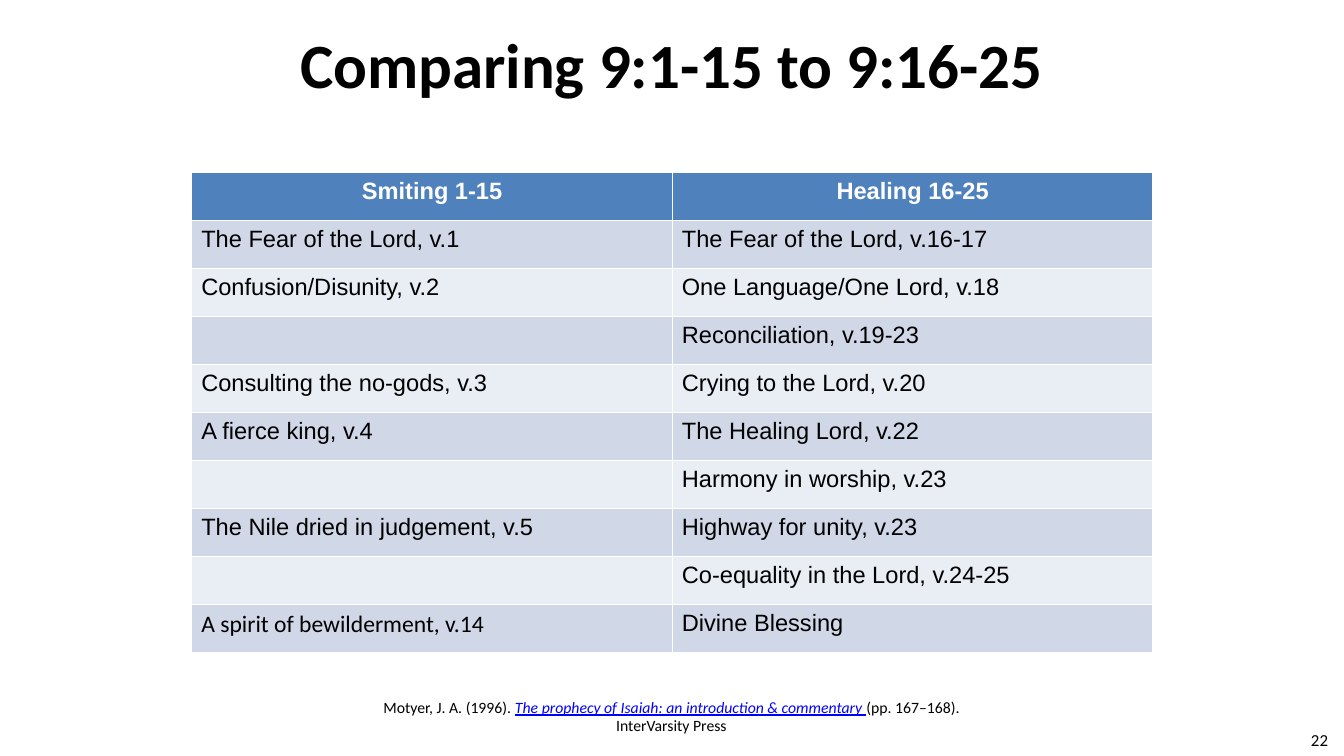
from dataclasses import dataclass

from pptx import Presentation
from pptx.dml.color import RGBColor
from pptx.enum import text
from pptx.util import Inches, Pt


@dataclass(frozen=True)
class Theme:
    black: str = "000000"
    white: str = "FFFFFF"
    link: str = "0000FF"
    header: str = "4F81BD"
    bands: tuple = ("D0D8E8", "E9EDF4")
    heading_font: str = "Calibri"
    table_font: str = "Arial"
    title_size: float = 48
    table_size: float = 18
    number_size: float = 12.8
    source_size: float = 12


theme = Theme()


def style(run, size, font, color=theme.black, bold=False):
    run.font.size = Pt(size)
    run.font.name = font
    run.font.color.rgb = RGBColor.from_string(color)
    run.font.bold = bold


prs = Presentation()
prs.slide_width, prs.slide_height = Inches(14.22), Inches(8)
slide = prs.slides.add_slide(prs.slide_layouts[5])

# Title
title = slide.shapes.title
title.left, title.top = Inches(0.71), Inches(0)
title.width, title.height = Inches(12.8), Inches(1.33)
title.text_frame.text = "Comparing 9:1-15 to 9:16-25"
title.text_frame.vertical_anchor = text.MSO_ANCHOR.MIDDLE
heading = title.text_frame.paragraphs[0]
heading.alignment = text.PP_ALIGN.CENTER
style(heading.runs[0], theme.title_size, theme.heading_font, bold=True)

# Slide number
number = slide.shapes.add_textbox(Inches(13.08), Inches(7.61), Inches(1.07), Inches(0.43))
number.text_frame.word_wrap = True
number.text_frame.vertical_anchor = text.MSO_ANCHOR.MIDDLE
number.text_frame.text = "22"
number_line = number.text_frame.paragraphs[0]
number_line.alignment = text.PP_ALIGN.RIGHT
style(number_line.runs[0], theme.number_size, theme.heading_font)

# Comparison table: the built-in style supplies the white rules
verses = [
    ("Smiting 1-15", "Healing 16-25"),
    ("The Fear of the Lord, v.1", "The Fear of the Lord, v.16-17"),
    ("Confusion/Disunity, v.2", "One Language/One Lord, v.18"),
    ("", "Reconciliation, v.19-23"),
    ("Consulting the no-gods, v.3", "Crying to the Lord, v.20"),
    ("A fierce king, v.4", "The Healing Lord, v.22"),
    ("", "Harmony in worship, v.23"),
    ("The Nile dried in judgement, v.5", "Highway for unity, v.23"),
    ("", "Co-equality in the Lord, v.24-25"),
    ("A spirit of bewilderment, v.14", "Divine Blessing"),
]
comparison = slide.shapes.add_table(
    len(verses), 2, Inches(2.03), Inches(1.83), Inches(10.17), Inches(5.08)
).table
for row, pair in enumerate(verses):
    is_header = row == 0
    fill = theme.header if is_header else theme.bands[(row - 1) % 2]
    for column, wording in enumerate(pair):
        cell = comparison.cell(row, column)
        cell.fill.solid()
        cell.fill.fore_color.rgb = RGBColor.from_string(fill)
        if not wording:
            continue
        cell.text_frame.text = wording
        line = cell.text_frame.paragraphs[0]
        if is_header:
            line.alignment = text.PP_ALIGN.CENTER
        in_heading_font = wording.startswith("A spirit")
        style(
            line.runs[0],
            theme.table_size,
            theme.heading_font if in_heading_font else theme.table_font,
            theme.white if is_header else theme.black,
            bold=is_header,
        )

# Source line
source = slide.shapes.add_textbox(Inches(3.55), Inches(7.33), Inches(7.11), Inches(0.5))
source.text_frame.word_wrap = True
citation = source.text_frame.paragraphs[0]
citation.alignment = text.PP_ALIGN.CENTER
for wording, is_book in [
    ("Motyer, J. A. (1996). ", False),
    ("The prophecy of Isaiah: an introduction & commentary ", True),
    ("(pp. 167–168).", False),
    ("InterVarsity Press", False),
]:
    if wording.startswith("InterVarsity"):
        citation.add_line_break()
    run = citation.add_run()
    run.text = wording
    style(run, theme.source_size, theme.heading_font, theme.link if is_book else theme.black)
    run.font.italic = is_book
    run.font.underline = is_book

prs.save("out.pptx")
